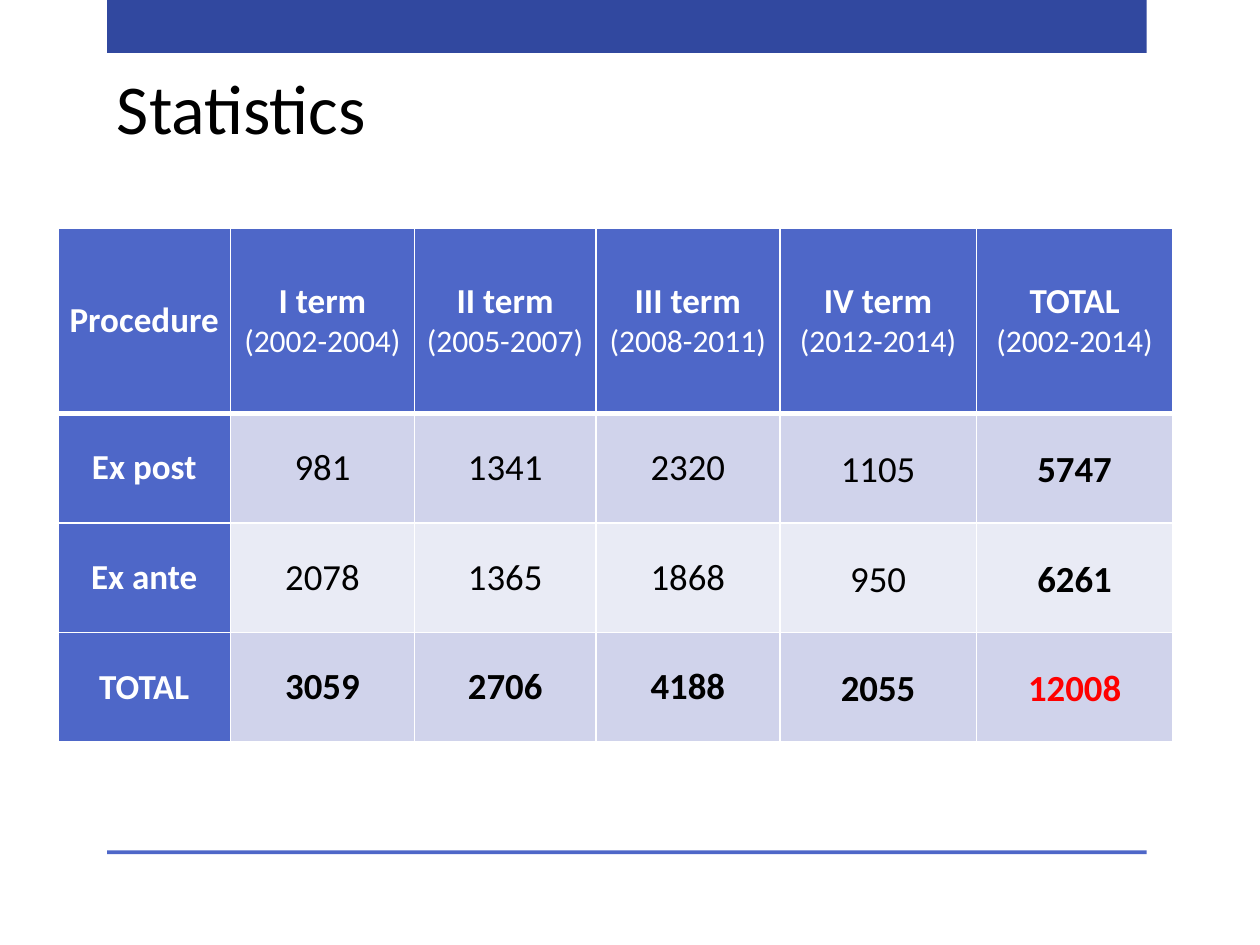
"""Build the statistics slide with procedures by term."""
import pptx
import pptx.dml.color
import pptx.enum.shapes
import pptx.enum.text
import pptx.oxml
import pptx.oxml.ns
import pptx.util

Pt = pptx.util.Pt
COLORS = {"band": "31489F", "accent": "4E67C8", "odd": "D0D3EB", "even": "E9EBF5",
          "white": "FFFFFF", "black": "000000", "red": "FF0000"}


def rgb(name):
    return pptx.dml.color.RGBColor.from_string(COLORS[name])


def add_run(paragraph, text, size, color, bold):
    run = paragraph.add_run()
    run.text = text
    for key, value in {"name": "Calibri", "size": Pt(size), "bold": bold}.items():
        setattr(run.font, key, value)
    run.font.color.rgb = rgb(color)


deck = pptx.Presentation()
deck.slide_width, deck.slide_height = Pt(720), Pt(540)
slide = deck.slides.add_slide(deck.slide_layouts[6])

for top, height, color in [(0, 30.24, "band"), (486, 2.16, "accent")]:
    bar = slide.shapes.add_shape(pptx.enum.shapes.MSO_SHAPE.RECTANGLE,
                                 Pt(61.2), Pt(top), Pt(594), Pt(height))
    bar.shadow.inherit = False
    bar.fill.solid()
    bar.fill.fore_color.rgb = rgb(color)
    bar.line.fill.background()

title = slide.shapes.add_textbox(Pt(59.76), Pt(37.44), Pt(621.36), Pt(51.12)).text_frame
title.word_wrap = True
title.vertical_anchor = pptx.enum.text.MSO_ANCHOR.BOTTOM
add_run(title.paragraphs[0], "Statistics", 40, "black", False)

terms = [("I term ", "(2002-2004)"), ("II term ", "(2005-2007)"), ("III term ", "(2008-2011)"),
         ("IV term ", "(2012-2014)"), ("TOTAL", "(2002-2014)")]
procedures = [("Ex post", "981", "1341", "2320", "1105", "5747"),
              ("Ex ante", "2078", "1365", "1868", "950", "6261"),
              ("TOTAL", "3059", "2706", "4188", "2055", "12008")]
rows = [("Procedure", *terms), *procedures]
widths = [98.64, 105.12, 103.68, 105.12, 112.32, 112.32]
heights = [105.84, 62.64, 62.64, 62.64]
statistics = slide.shapes.add_table(len(rows), len(widths), Pt(33.12), Pt(130.32),
                                    Pt(sum(widths)), Pt(sum(heights))).table
for column, width in zip(statistics.columns, widths):
    column.width = Pt(width)
for row, height in zip(statistics.rows, heights):
    row.height = Pt(height)

for r, entries in enumerate(rows):
    for c, entry in enumerate(entries):
        cell = statistics.cell(r, c)
        late_column = r > 0 and c > 3
        cell_format = {"vertical_anchor": pptx.enum.text.MSO_ANCHOR.MIDDLE,
                       "margin_left": Pt(4.32), "margin_right": Pt(4.32),
                       "margin_top": Pt(0.72 if late_column else 0), "margin_bottom": Pt(0)}
        for key, value in cell_format.items():
            setattr(cell, key, value)

        for side in "LRTB":
            thick = (r == 0 and side == "B") or (r == 1 and side == "T")
            cell._tc.get_or_add_tcPr().append(pptx.oxml.parse_xml(
                f'<a:ln{side} {pptx.oxml.ns.nsdecls("a")} w="{Pt(3 if thick else 1)}"><a:solidFill>'
                f'<a:srgbClr val="{COLORS["white"]}"/></a:solidFill></a:ln{side}>'))
        heading = r == 0 or c == 0
        cell.fill.solid()
        cell.fill.fore_color.rgb = rgb("accent" if heading else "odd" if r % 2 else "even")

        paragraph = cell.text_frame.paragraphs[0]
        paragraph.alignment = pptx.enum.text.PP_ALIGN.CENTER
        if late_column:
            paragraph.line_spacing = 1.07
            paragraph.space_after = Pt(8)
        if r == 0 and c > 0:
            term, years = entry
            add_run(paragraph, term, 20, "white", True)
            if term == "TOTAL":
                paragraph = cell.text_frame.add_paragraph()
                paragraph.alignment = pptx.enum.text.PP_ALIGN.CENTER
            add_run(paragraph, years, 18, "white", False)
        elif heading:
            add_run(paragraph, entry, 20, "white", True)
        else:
            in_total = r == len(rows) - 1 or c == len(widths) - 1
            grand_total = r == len(rows) - 1 and c == len(widths) - 1
            add_run(paragraph, entry, 21, "red" if grand_total else "black", in_total)

deck.save("out.pptx")
